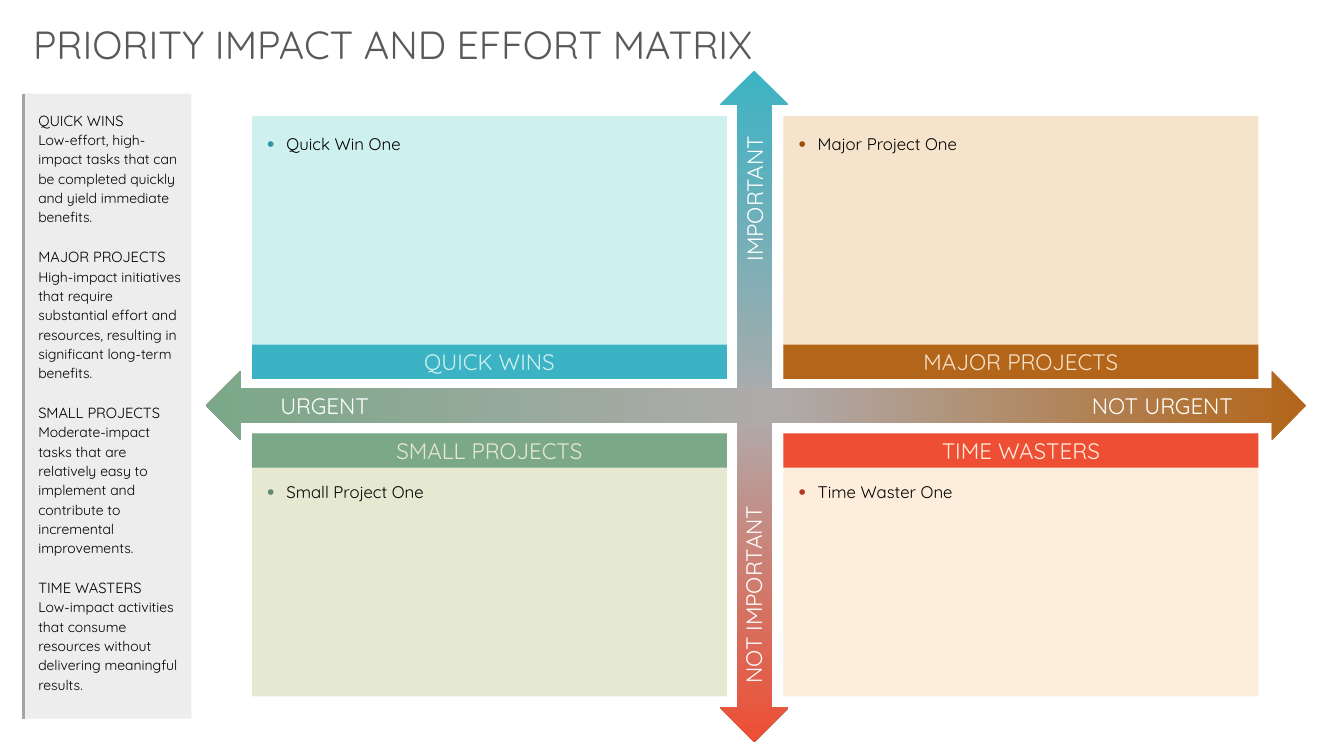
import copy
from dataclasses import dataclass

import lxml.etree
import pptx
import pptx.dml.color
import pptx.enum.shapes
import pptx.enum.text
import pptx.oxml.ns
import pptx.util

Inches, Pt = pptx.util.Inches, pptx.util.Pt
qn = pptx.oxml.ns.qn
SHAPES = pptx.enum.shapes.MSO_SHAPE
ALIGN = pptx.enum.text.PP_ALIGN
ANCHOR = pptx.enum.text.MSO_ANCHOR

FONT = "Quicksand"
PANEL_W, PANEL_H, HEADER_H = 4.71, 2.61, 0.34
LEFT_X, RIGHT_X, UPPER_Y, LOWER_Y = 2.5, 7.77, 1.15, 4.3
SIDE_X, SIDE_Y, SIDE_W, SIDE_H = 0.23, 0.93, 1.67, 6.2


@dataclass
class Quadrant:
    name: str
    item: str
    meaning: str
    x: float
    y: float
    tint: str
    strong: str
    bullet: str


@dataclass
class Axis:
    x: float
    y: float
    width: float
    height: float
    rotation: int
    stops: list[tuple[float, str]]


@dataclass
class AxisLabel:
    text: str
    x: float
    y: float
    width: float
    rotation: int = 0


QUADRANTS = [
    Quadrant("QUICK WINS", "Quick Win One",
             "Low-effort, high-impact tasks that can be completed quickly and yield "
             "immediate benefits.",
             LEFT_X, UPPER_Y, "CEF1EF", "3CB3C4", "3194A2"),
    Quadrant("MAJOR PROJECTS", "Major Project One",
             "High-impact initiatives that require substantial effort and resources, "
             "resulting in significant long-term benefits.",
             RIGHT_X, UPPER_Y, "F5E3CC", "B36519", "945315"),
    Quadrant("SMALL PROJECTS", "Small Project One",
             "Moderate-impact tasks that are relatively easy to implement and "
             "contribute to incremental improvements.",
             LEFT_X, LOWER_Y, "E6E9D2", "7BA889", "63876E"),
    Quadrant("TIME WASTERS", "Time Waster One",
             "Low-impact activities that consume resources without delivering "
             "meaningful results.",
             RIGHT_X, LOWER_Y, "FDEDDB", "EE4E34", "B13B28"),
]
AXES = [
    Axis(7.14, 0.7, 0.68, 6.66, 0, [(0, "3CB3C4"), (0.51, "AFABAB"), (1, "EE4E34")]),
    Axis(7.16, -1.43, 0.68, 10.91, 90, [(0, "B36519"), (0.48, "AFABAB"), (1, "7BA889")]),
]
AXIS_LABELS = [
    AxisLabel("URGENT", 2.42, 3.87, 1.6),
    AxisLabel("NOT URGENT", 10.58, 3.87, 1.9),
    AxisLabel("NOT IMPORTANT", 6.39, 5.75, 2.16, 270),
    AxisLabel("IMPORTANT", 6.58, 1.82, 1.8, 270),
]


def rgb(color: str):
    return pptx.dml.color.RGBColor.from_string(color)


def style(paragraph, size: float, color: str) -> None:
    for run in paragraph.runs:
        run.font.name, run.font.size = FONT, Pt(size)
        run.font.color.rgb = rgb(color)


def set_insets(frame, left: float, top: float, right: float, bottom: float) -> None:
    frame.margin_left, frame.margin_top = Inches(left), Inches(top)
    frame.margin_right, frame.margin_bottom = Inches(right), Inches(bottom)


def add_block(slide, kind, x: float, y: float, width: float, height: float):
    block = slide.shapes.add_shape(kind, Inches(x), Inches(y), Inches(width), Inches(height))
    block.shadow.inherit = False
    block.line.fill.background()
    return block


def add_rect(slide, x: float, y: float, width: float, height: float, color: str):
    rect = add_block(slide, SHAPES.RECTANGLE, x, y, width, height)
    rect.fill.solid()
    rect.fill.fore_color.rgb = rgb(color)
    rect.text_frame.word_wrap = True
    rect.text_frame.vertical_anchor = ANCHOR.TOP
    return rect


def center_text(frame, text: str, color: str) -> None:
    frame.text = text
    frame.word_wrap = True
    frame.vertical_anchor = ANCHOR.MIDDLE
    set_insets(frame, 0, 0, 0, 0)
    frame.paragraphs[0].alignment = ALIGN.CENTER
    style(frame.paragraphs[0], 16, color)


def add_bullet(paragraph, color: str) -> None:
    props = paragraph._p.get_or_add_pPr()
    props.set("marL", str(Inches(0.19)))
    props.set("indent", str(-Inches(0.19)))
    bullet_color = lxml.etree.SubElement(props, qn("a:buClr"))
    lxml.etree.SubElement(bullet_color, qn("a:srgbClr"), val=color)
    lxml.etree.SubElement(props, qn("a:buSzPct"), val="125000")
    lxml.etree.SubElement(props, qn("a:buFont"), typeface="Arial")
    lxml.etree.SubElement(props, qn("a:buChar"), char="•")


def add_title(slide) -> None:
    title = slide.shapes.add_textbox(Inches(0.23), Inches(0.15), Inches(7.36), Inches(0.57))
    title.text_frame.text = "PRIORITY IMPACT AND EFFORT MATRIX"
    style(title.text_frame.paragraphs[0], 28, "595959")


def add_sidebar(slide) -> None:
    frame = add_rect(slide, SIDE_X, SIDE_Y, SIDE_W, SIDE_H, "EDEDED").text_frame
    set_insets(frame, 0.15, 0.15, 0.1, 0.05)
    frame.text = "\n".join(f"{quadrant.name}\n{quadrant.meaning}" for quadrant in QUADRANTS)
    for index, paragraph in enumerate(frame.paragraphs):
        is_name = index % 2 == 0
        paragraph.alignment = ALIGN.LEFT
        paragraph.line_spacing = 1.15
        if is_name and index:
            paragraph.space_before = Pt(14)
        style(paragraph, 10.5 if is_name else 10, "000000")


def add_sidebar_edge(slide) -> None:
    edge = slide.shapes.add_connector(
        pptx.enum.shapes.MSO_CONNECTOR.STRAIGHT,
        Inches(SIDE_X), Inches(SIDE_Y), Inches(SIDE_X), Inches(SIDE_Y + SIDE_H))
    edge.line.color.rgb = rgb("A5A5A5")
    edge.line.width = Pt(2)
    lxml.etree.SubElement(edge._element.spPr, qn("a:effectLst"))


def add_axis(slide, axis: Axis) -> None:
    arrow = add_block(slide, SHAPES.UP_DOWN_ARROW, axis.x, axis.y, axis.width, axis.height)
    arrow.rotation = axis.rotation
    arrow.adjustments[0], arrow.adjustments[1] = 0.463, 0.5
    arrow.fill.gradient()
    arrow.fill.gradient_angle = 270
    # The default gradient has two stops; add the middle one
    first_stop = next(arrow._element.spPr.iter(qn("a:gs")))
    first_stop.addnext(copy.deepcopy(first_stop))
    for stop, (position, color) in zip(arrow.fill.gradient_stops, axis.stops):
        stop.position = position
        stop.color.rgb = rgb(color)


def add_axis_label(slide, label: AxisLabel) -> None:
    box = slide.shapes.add_textbox(
        Inches(label.x), Inches(label.y), Inches(label.width), Inches(0.3))
    box.rotation = label.rotation
    center_text(box.text_frame, label.text, "FFFFFF")


def add_quadrant(slide, quadrant: Quadrant) -> None:
    is_upper = quadrant.y == UPPER_Y
    panel = add_rect(slide, quadrant.x, quadrant.y, PANEL_W, PANEL_H, quadrant.tint)
    frame = panel.text_frame
    set_insets(frame, 0.15, 0.15 if is_upper else 0.45, 0.1, 0.05)
    frame.text = quadrant.item
    item = frame.paragraphs[0]
    item.alignment = ALIGN.LEFT
    item.line_spacing = 1.15
    item.space_after = Pt(8)
    add_bullet(item, quadrant.bullet)
    style(item, 12, "000000")

    # Headers sit on the side facing the horizontal axis
    header_y = quadrant.y + PANEL_H - HEADER_H if is_upper else quadrant.y
    header = add_rect(slide, quadrant.x, header_y, PANEL_W, HEADER_H, quadrant.strong)
    center_text(header.text_frame, quadrant.name, quadrant.tint)


def main() -> None:
    deck = pptx.Presentation()
    deck.slide_width, deck.slide_height = Inches(13.33), Inches(7.5)
    slide = deck.slides.add_slide(deck.slide_layouts[6])

    # Title and definitions
    add_title(slide)
    add_sidebar(slide)
    add_sidebar_edge(slide)

    # Axes and their labels
    for axis in AXES:
        add_axis(slide, axis)
    for label in AXIS_LABELS:
        add_axis_label(slide, label)

    # Matrix
    for quadrant in QUADRANTS:
        add_quadrant(slide, quadrant)
    deck.save("out.pptx")


if __name__ == "__main__":
    main()
